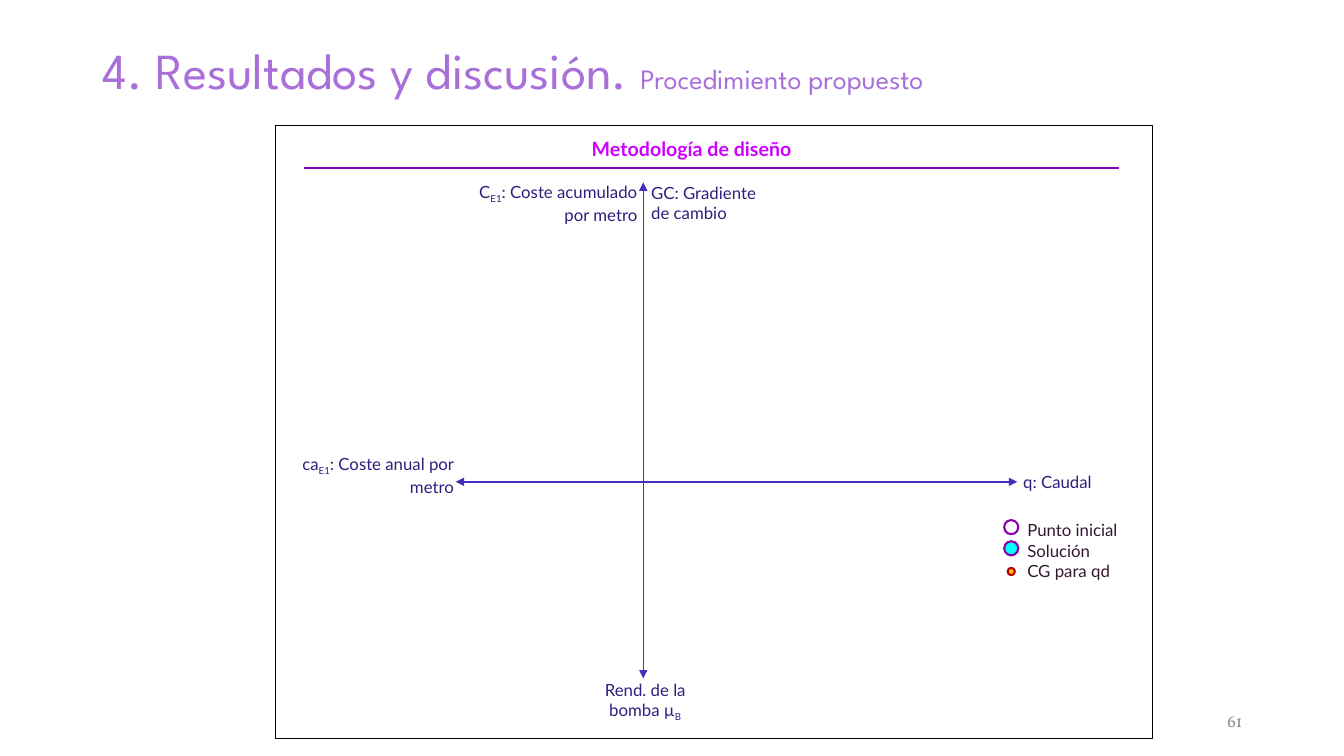
from lxml.etree import SubElement
from pptx import Presentation
from pptx.dml.color import RGBColor
from pptx.enum.shapes import MSO_CONNECTOR as Link, MSO_SHAPE as Shape
from pptx.enum.text import MSO_ANCHOR as Anchor, MSO_AUTO_SIZE as Fit, PP_ALIGN as Align
from pptx.oxml.ns import qn
from pptx.util import Inches, Pt

INK = "301D7E"
AXIS = "482CBC"
PLUM = "8B00AC"


def paint(target, color):
    """Give a font or a fill a solid hex colour."""
    if hasattr(target, "solid"):
        target.solid()
        target.fore_color.rgb = RGBColor.from_string(color)
    else:
        target.color.rgb = RGBColor.from_string(color)


def style(font, size, color, face="Lato", bold=False):
    """Set the look of a font."""
    font.size = Pt(size)
    font.name = face
    font.bold = bold
    paint(font, color)


def add_title(slide, main, sub):
    """Fill the title placeholder with a main and a smaller part."""
    title = slide.shapes.title
    title.left, title.top, title.width, title.height = map(Inches, (0.92, 0, 11.5, 1.45))
    frame = title.text_frame
    frame.auto_size = Fit.NONE
    frame.vertical_anchor = Anchor.MIDDLE
    para = frame.paragraphs[0]
    para.alignment = Align.LEFT
    para.line_spacing = 0.9
    for text, size in ((main, 36), (sub, 20)):
        run = para.add_run()
        run.text = text
        style(run.font, size, "AA70DA", "League Spartan")


def add_text(slide, box, lines, align=Align.LEFT, size=12, color=INK, **look):
    """Add a text box; each line is a list of parts, odd parts are subscripts."""
    frame = slide.shapes.add_textbox(*map(Inches, box)).text_frame
    frame.word_wrap = True
    frame.vertical_anchor = Anchor.MIDDLE
    for i, parts in enumerate(lines):
        para = frame.add_paragraph() if i else frame.paragraphs[0]
        para.alignment = align
        style(para.font, size, color, **look)
        for j, part in enumerate(parts):
            run = para.add_run()
            run.text = part
            if j % 2:
                run.font._element.set("baseline", "-25000")


def add_shape(slide, kind, box, line, width, fill=None):
    """Add an outlined shape, filled or hollow."""
    shape = slide.shapes.add_shape(kind, *map(Inches, box))
    shape.shadow.inherit = False
    if fill:
        paint(shape.fill, fill)
    else:
        shape.fill.background()
    paint(shape.line.fill, line)
    shape.line.width = Pt(width)


def add_line(slide, ends, color, width, arrows=False):
    """Add a straight line, with arrowheads at both ends if asked."""
    link = slide.shapes.add_connector(Link.STRAIGHT, *map(Inches, ends))
    paint(link.line.fill, color)
    link.line.width = Pt(width)
    if arrows:
        for tag in ("a:headEnd", "a:tailEnd"):
            SubElement(link.line._get_or_add_ln(), qn(tag), type="triangle")
    SubElement(link._element.spPr, qn("a:effectLst"))


def add_key(slide):
    """Add the legend of round markers."""
    names = [["Punto inicial"], ["Solución"], ["CG para qd"]]
    add_text(slide, (10.09, 5.06, 1.31, 0.8), names, color="321731")
    marks = (
        (5.23, 0.14, "FFFFFF", PLUM),
        (5.44, 0.14, "00FFFF", PLUM),
        (5.67, 0.07, "FFC000", "C00000"),
    )
    for mid, size, fill, line in marks:
        box = (10.03 - size / 2, mid - size / 2, size, size)
        add_shape(slide, Shape.OVAL, box, line, 1.5, fill)


def main():
    """Build the slide and save it."""
    deck = Presentation()
    deck.slide_width, deck.slide_height = Inches(13.33), Inches(7.5)
    slide = deck.slides.add_slide(deck.slide_layouts[5])
    add_title(slide, "4. Resultados y discusión. ", "Procedimiento propuesto")
    add_shape(slide, Shape.RECTANGLE, (2.73, 1.24, 8.7, 6.09), "000000", 0.5)
    add_text(slide, (5.77, 1.2, 2.85, 0.55), [["Metodología de diseño"]],
             size=14, color="CC00FF", bold=True)
    add_line(slide, (3.02, 1.67, 11.1, 1.67), PLUM, 1.5)
    add_line(slide, (6.38, 1.81, 6.38, 6.73), AXIS, 1, True)
    add_line(slide, (10.09, 4.78, 4.52, 4.78), AXIS, 1, True)
    labels = (
        (6.36, 1.74, 1.43, Align.LEFT, ["GC: Gradiente de cambio"]),
        (10.05, 4.5, 1.38, Align.LEFT, ["q: Caudal"]),
        (2.81, 4.44, 1.79, Align.RIGHT, ["ca", "E1", ": Coste anual por metro"]),
        (5.75, 6.68, 1.3, Align.CENTER, ["Rend. de la bomba µ", "B"]),
        (4.55, 1.74, 1.87, Align.RIGHT, ["C", "E1", ": Coste acumulado por metro"]),
    )
    for left, top, width, align, parts in labels:
        add_text(slide, (left, top, width, 0.55), [parts], align)
    add_key(slide)
    add_text(slide, (9.42, 6.95, 3, 0.4), [["61"]], Align.RIGHT,
             color="8C8C8C", face="Vollkorn")
    deck.save("out.pptx")


if __name__ == "__main__":
    main()
